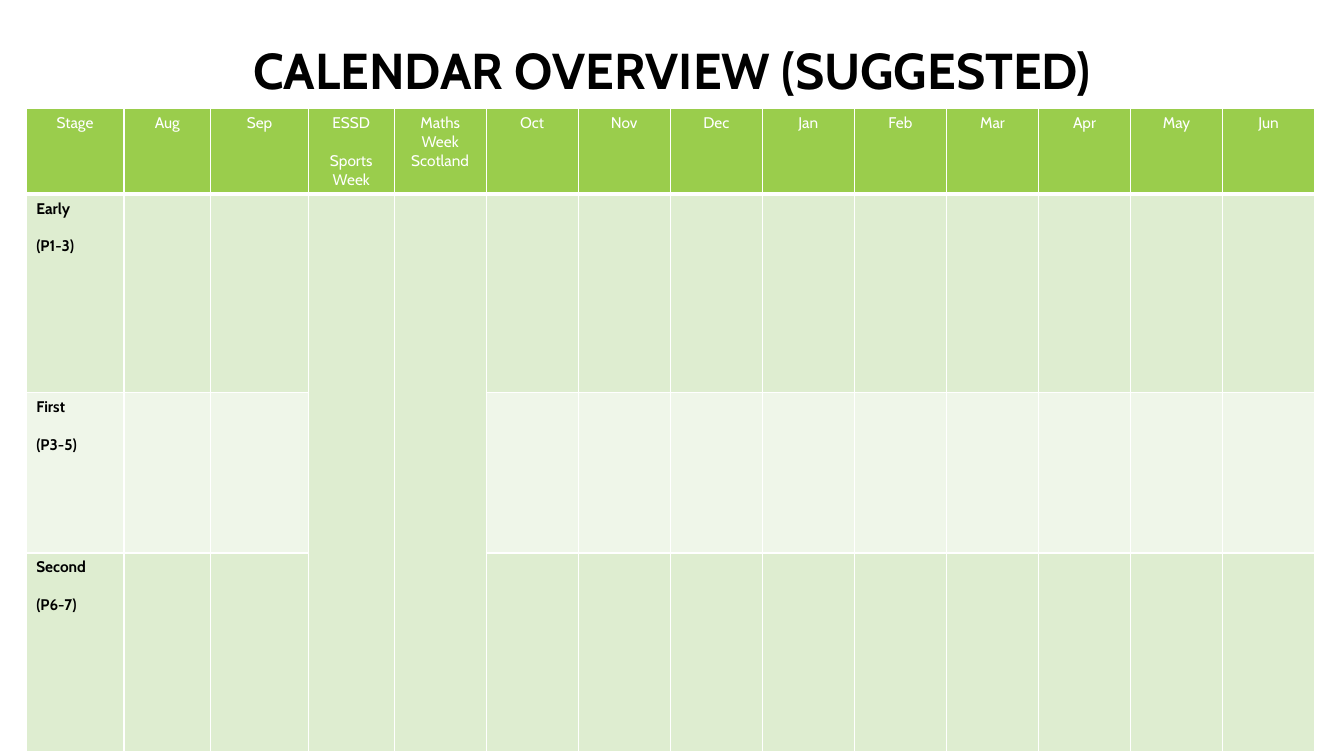
from lxml import etree
from pptx import Presentation
from pptx import util as u
from pptx.dml.color import RGBColor
from pptx.enum import text
from pptx.oxml import ns

TITLE = "CALENDAR OVERVIEW (SUGGESTED)"
HEADERS = [
    ["Stage"], ["Aug"], ["Sep"], ["ESSD", "Sports Week"], ["Maths Week Scotland"],
    ["Oct"], ["Nov"], ["Dec"], ["Jan"], ["Feb"], ["Mar"], ["Apr"], ["May"], ["Jun"],
]
STAGES = [["Early", "(P1-3)"], ["First", "(P3-5)"], ["Second", "(P6-7)"]]
EVENT_COLUMNS = (3, 4)
COLORS = {"header": "9ACD4C", "dark": "DEEDD0", "light": "EFF6E9",
          "white": "FFFFFF", "black": "000000"}
FONT = "Cabin"
LINE = 13.4  # points between baselines of 11 pt text

SLIDE_W, SLIDE_H = 13.33, 7.5
TABLE_LEFT, TABLE_TOP = 0.26, 1.08
COLUMN_W = [0.97, 0.86, 0.97, 0.85] + [0.913] * (len(HEADERS) - 4)
ROW_H = [0.84, 1.97, 1.59, 1.97]


def write(frame, lines, size=11, color="black", bold=False,
          align=text.PP_ALIGN.LEFT, gap=0, spacing=1.0):
    """Put each line in its own paragraph, with gap points between them."""
    for index, line in enumerate(lines):
        para = frame.paragraphs[0] if index == 0 else frame.add_paragraph()
        para.alignment = align
        para.line_spacing = spacing
        if index:
            para.space_before = u.Pt(gap)
        span = para.add_run()
        span.text = line
        span.font.name = FONT
        span.font.size = u.Pt(size)
        span.font.bold = bold
        span.font.color.rgb = RGBColor.from_string(COLORS[color])


def style_cell(cell, fill, widths):
    """Add white borders (points by side L, R, T, B), then the fill."""
    properties = cell._tc.get_or_add_tcPr()
    for side, width in widths.items():
        line = etree.SubElement(properties, ns.qn(f"a:ln{side}"), w=str(u.Pt(width)))
        solid = etree.SubElement(line, ns.qn("a:solidFill"))
        etree.SubElement(solid, ns.qn("a:srgbClr"), val=COLORS["white"])
    cell.fill.solid()
    cell.fill.fore_color.rgb = RGBColor.from_string(COLORS[fill])


def add_title(page):
    title = page.shapes.title
    title.left, title.top = u.Inches(1.25), u.Inches(-0.08)
    title.width, title.height = u.Inches(10.83), u.Inches(1.62)
    frame = title.text_frame
    frame.word_wrap = True
    frame.auto_size = text.MSO_AUTO_SIZE.NONE
    frame.vertical_anchor = text.MSO_ANCHOR.MIDDLE
    write(frame, [TITLE], size=36, bold=True, align=text.PP_ALIGN.CENTER, spacing=0.9)


def add_calendar(page):
    calendar = page.shapes.add_table(
        len(ROW_H), len(HEADERS), u.Inches(TABLE_LEFT), u.Inches(TABLE_TOP),
        u.Inches(sum(COLUMN_W)), u.Inches(sum(ROW_H))).table
    for column, width in zip(calendar.columns, COLUMN_W):
        column.width = u.Inches(width)
    for row, height in zip(calendar.rows, ROW_H):
        row.height = u.Inches(height)
    for column in EVENT_COLUMNS:
        calendar.cell(1, column).merge(calendar.cell(len(STAGES), column))

    for r, row in enumerate(calendar.rows):
        fill = "header" if r == 0 else "dark" if r % 2 else "light"
        widths = {"L": 1, "R": 1, "T": 3 if r == 1 else 1, "B": 3 if r == 0 else 1}
        for cell in row.cells:
            if not cell.is_spanned:
                style_cell(cell, fill, widths)
    for column, lines in enumerate(HEADERS):
        write(calendar.cell(0, column).text_frame, lines, color="white",
              align=text.PP_ALIGN.CENTER, gap=LINE)
    for r, lines in enumerate(STAGES, start=1):
        write(calendar.cell(r, 0).text_frame, lines, bold=True, gap=LINE)


def main():
    deck = Presentation()
    deck.slide_width, deck.slide_height = u.Inches(SLIDE_W), u.Inches(SLIDE_H)
    page = deck.slides.add_slide(deck.slide_layouts[5])
    add_title(page)
    add_calendar(page)
    deck.save("out.pptx")


if __name__ == "__main__":
    main()
